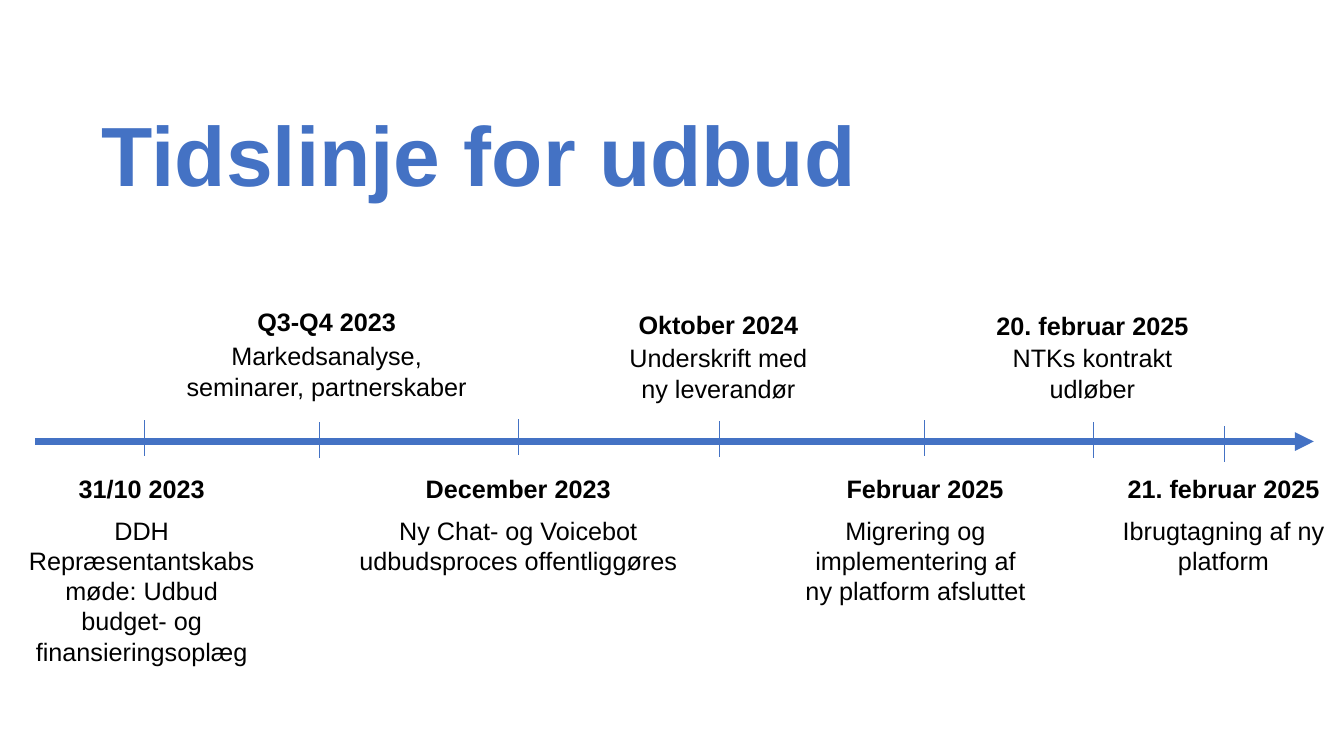
import pptx
import pptx.util
import pptx.dml.color
import pptx.enum.shapes
import pptx.enum.text
import pptx.oxml.ns
import lxml.etree

Inches = pptx.util.Inches
Pt = pptx.util.Pt
BLUE = "4472C4"
BLACK = "000000"


def add_line(x1, y1, x2, y2, width):
    c = s.shapes.add_connector(
        pptx.enum.shapes.MSO_CONNECTOR.STRAIGHT,
        Inches(x1), Inches(y1), Inches(x2), Inches(y2))
    c.line.color.rgb = pptx.dml.color.RGBColor.from_string(BLUE)
    c.line.width = Pt(width)
    lxml.etree.SubElement(c._element.spPr, pptx.oxml.ns.qn("a:effectLst"))
    return c


def set_text(sp, text, size, color, bold, align):
    tf = sp.text_frame
    tf.text = text
    tf.word_wrap = True
    tf.auto_size = pptx.enum.text.MSO_AUTO_SIZE.SHAPE_TO_FIT_TEXT
    tf.vertical_anchor = pptx.enum.text.MSO_ANCHOR.TOP
    p = tf.paragraphs[0]
    p.alignment = align
    r = p.runs[0]
    r.font.name = "Arial"
    r.font.size = Pt(size)
    r.font.bold = bold
    r.font.color.rgb = pptx.dml.color.RGBColor.from_string(color)


prs = pptx.Presentation()
prs.slide_width = Inches(13.33)
prs.slide_height = Inches(7.5)
s = prs.slides.add_slide(prs.slide_layouts[5])

title = s.shapes.title
title.left, title.top = Inches(0.91), Inches(0.97)
title.width, title.height = Inches(8.8), Inches(1.11)
set_text(title, "Tidslinje for udbud", 60, BLUE, True, pptx.enum.text.PP_ALIGN.LEFT)

axis = add_line(0.35, 4.38, 13.03, 4.38, 4.5)
ln = axis.line._get_or_add_ln()
lxml.etree.SubElement(ln, pptx.oxml.ns.qn("a:tailEnd"), type="triangle")

# tick x, tick top, date (text, left, top, width), event (text, left, top, width, lines)
milestones = [
    (1.43, 4.17, ("31/10 2023", 0.57, 4.65, 1.67),
     ("DDH Repræsentantskabsmøde: Udbud budget- og finansieringsoplæg", 0.12, 5.06, 2.57, 5)),
    (3.17, 4.19, ("Q3-Q4 2023", 2.12, 2.99, 2.24),
     ("Markedsanalyse, seminarer, partnerskaber", 1.72, 3.33, 3.04, 2)),
    (5.14, 4.16, ("December 2023", 4.02, 4.65, 2.24),
     ("Ny Chat- og Voicebot udbudsproces offentliggøres", 3.14, 5.06, 4, 2)),
    (7.13, 4.18, ("Oktober 2024", 6.02, 3.02, 2.21),
     ("Underskrift med ny leverandør", 6.02, 3.35, 2.21, 2)),
    (9.17, 4.17, ("Februar 2025", 8.07, 4.65, 2.21),
     ("Migrering og implementering af ny platform afsluttet", 7.88, 5.06, 2.4, 3)),
    (10.84, 4.19, ("20. februar 2025", 9.73, 3.03, 2.21),
     ("NTKs kontrakt udløber", 9.73, 3.35, 2.21, 2)),
    (12.14, 4.23, ("21. februar 2025", 11.03, 4.65, 2.21),
     ("Ibrugtagning af ny platform", 11.03, 5.06, 2.21, 2)),
]

for tick_x, tick_top, date, event in milestones:
    add_line(tick_x, tick_top + 0.35, tick_x, tick_top, 0.5)
    for (text, left, top, width, lines), bold in (((*date, 1), True), (event, False)):
        sp = s.shapes.add_textbox(
            Inches(left), Inches(top), Inches(width), Inches(0.1 + 0.3 * lines))
        set_text(sp, text, 18, BLACK, bold, pptx.enum.text.PP_ALIGN.CENTER)

prs.save("out.pptx")
